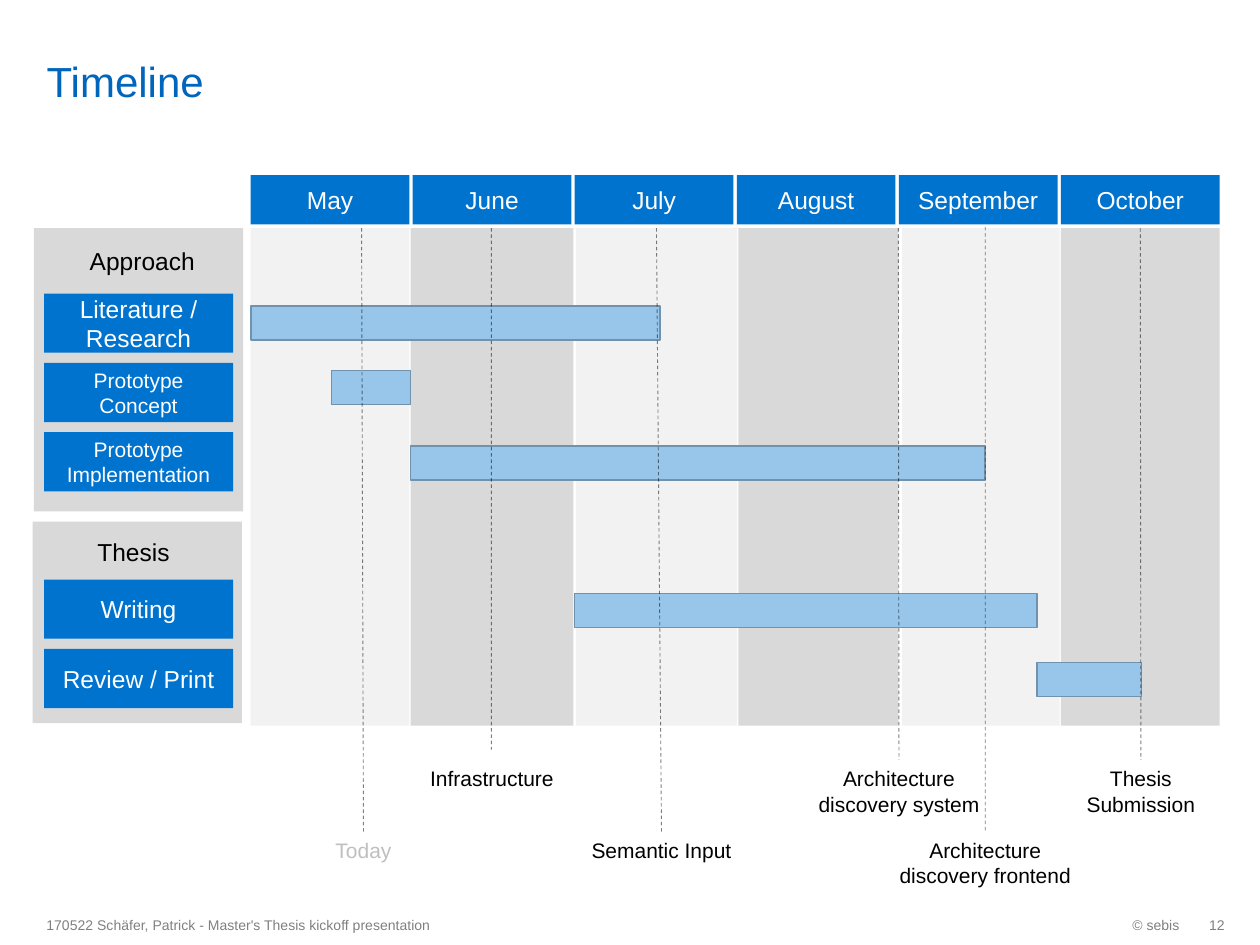
from lxml import etree
from pptx import Presentation
from pptx.dml.color import RGBColor
from pptx.enum.dml import MSO_LINE
from pptx.enum.shapes import MSO_CONNECTOR, MSO_SHAPE
from pptx.enum.text import MSO_ANCHOR as ANCHOR, MSO_AUTO_SIZE as AUTO_SIZE, PP_ALIGN as ALIGN
from pptx.oxml.ns import qn
from pptx.util import Inches, Pt

BLUE, GREY, LIGHT_GREY = "0073CF", "D9D9D9", "F2F2F2"
BLACK, WHITE, FOOTER_GREY = "000000", "FFFFFF", "808080"

# Month, then left and width of its column
MONTHS = [("May", 1.99, 1.26), ("June", 3.26, 1.29), ("July", 4.57, 1.28),
          ("August", 5.86, 1.27), ("September", 7.16, 1.25), ("October", 8.42, 1.26)]

# Heading with its box, panel box, tasks with text size
GROUPS = [
    ("Approach", (0.61, 1.9, 1.04, 0.34), (0.27, 1.81, 1.66, 2.25), 2.33,
     [("Literature / Research", 14), ("Prototype Concept", 12),
      ("Prototype Implementation", 12)]),
    ("Thesis", (0.67, 4.21, 0.78, 0.34), (0.26, 4.14, 1.66, 1.6), 4.6,
     [("Writing", 14), ("Review / Print", 14)]),
]

# Left, top and width of each task's time span
SPANS = [(1.99, 2.43, 3.25), (2.63, 2.94, 0.63), (3.26, 3.54, 4.56),
         (4.56, 4.71, 3.67), (8.23, 5.26, 0.83)]

# Label lines, label box, line start, line end (None: the label's top)
MILESTONES = [
    (["Thesis", "Submission"], (8.52, 6.03, 1.07, 0.5), (9.05, 1.81), None, BLACK),
    (["Infrastructure"], (3.31, 6.03, 1.19, 0.3), (3.9, 1.81), (3.9, 5.95), BLACK),
    (["Today"], (2.56, 6.6, 0.65, 0.3), (2.87, 1.81), None, "BFBFBF"),
    (["Semantic Input"], (4.59, 6.6, 1.32, 0.3), (5.21, 1.81), None, BLACK),
    (["Architecture", "discovery system"], (6.39, 6.03, 1.49, 0.5), (7.13, 1.81), None, BLACK),
    (["Architecture", "discovery frontend"], (7.01, 6.6, 1.62, 0.5), (7.82, 1.8), None, BLACK),
]


def color(hex_string):
    return RGBColor.from_string(hex_string)


def write(frame, lines, size, ink, align):
    paragraph = frame.paragraphs[0]
    paragraph.alignment = align
    for index, line in enumerate(lines):
        if index:
            paragraph.add_line_break()
        run = paragraph.add_run()
        run.text = line
        run.font.name = "Arial"
        run.font.size = Pt(size)
        run.font.color.rgb = color(ink)


def add_box(slide, box, fill, text=None, size=14, outline=None):
    rect = slide.shapes.add_shape(MSO_SHAPE.RECTANGLE, *map(Inches, box))
    rect.shadow.inherit = False
    rect.fill.solid()
    rect.fill.fore_color.rgb = color(fill)
    if outline:
        rect.line.color.rgb = color(outline)
        rect.line.width = Pt(0.85)
    else:
        rect.line.fill.background()
    if text:
        rect.text_frame.vertical_anchor = ANCHOR.MIDDLE
        write(rect.text_frame, [text], size, WHITE, ALIGN.CENTER)


def add_label(slide, box, lines, size, ink=BLACK, align=ALIGN.CENTER,
              anchor=ANCHOR.TOP, wrap=False, grow=True):
    label = slide.shapes.add_textbox(*map(Inches, box))
    frame = label.text_frame
    frame.word_wrap = wrap
    frame.auto_size = AUTO_SIZE.SHAPE_TO_FIT_TEXT if grow else AUTO_SIZE.NONE
    frame.vertical_anchor = anchor
    write(frame, lines, size, ink, align)
    return label


def add_title(slide, box, text):
    title = slide.shapes.title
    title.left, title.top, title.width, title.height = map(Inches, box)
    frame = title.text_frame
    frame.vertical_anchor = ANCHOR.BOTTOM
    frame.margin_top = frame.margin_bottom = 0
    write(frame, [text], 24, "0065BD", ALIGN.LEFT)


def add_footer(slide, top):
    style = dict(size=8, ink=FOOTER_GREY, anchor=ANCHOR.MIDDLE, grow=False)
    add_label(slide, (7.7, top, 1.76, 0.32), ["© sebis"], align=ALIGN.RIGHT, **style)
    number = add_label(slide, (9.45, top, 0.27, 0.32), ["12"], align=ALIGN.RIGHT, **style)
    number.text_frame.margin_right = 0
    add_label(slide, (0.27, top, 4.73, 0.32),
              ["170522 Schäfer, Patrick - Master's Thesis kickoff presentation"],
              align=ALIGN.LEFT, wrap=True, **style)


def add_calendar(slide, box):
    left, top, width, height = box
    header_width, header_height, body_offset = 1.26, 0.39, 0.42
    pitch = (width - header_width) / (len(MONTHS) - 1)
    for index, (month, column_left, column_width) in enumerate(MONTHS):
        add_box(slide, (left + index * pitch, top, header_width, header_height), BLUE, month)
        add_box(slide, (column_left, top + body_offset, column_width, height - body_offset),
                GREY if index % 2 else LIGHT_GREY)


def add_group(slide, heading, heading_box, panel_box, first_top, tasks):
    add_box(slide, panel_box, GREY)
    add_label(slide, heading_box, [heading], 14)
    for index, (task, size) in enumerate(tasks):
        add_box(slide, (0.35, first_top + index * 0.55, 1.5, 0.47), BLUE, task, size)


def add_milestone(slide, lines, label_box, start, end, ink):
    label = add_label(slide, label_box, lines, 12, ink)
    marker = slide.shapes.add_connector(
        MSO_CONNECTOR.STRAIGHT, *map(Inches, start + (end or start)))
    if end is None:
        marker.end_connect(label, 0)
    marker.line.width = Pt(0.5)
    marker.line.color.rgb = color(BLACK)
    marker.line.dash_style = MSO_LINE.DASH
    # Half-transparent line without shadow
    properties = marker.line._get_or_add_ln().getparent()
    etree.SubElement(next(properties.iter(qn("a:srgbClr"))), qn("a:alpha"), val="50000")
    etree.SubElement(properties, qn("a:effectLst"))


def main():
    prs = Presentation()
    prs.slide_width, prs.slide_height = Inches(10), Inches(7.5)
    slide = prs.slides.add_slide(prs.slide_layouts[5])
    add_title(slide, (0.27, 0.05, 8.24, 0.79), "Timeline")
    add_footer(slide, 7.18)
    add_calendar(slide, (1.99, 1.39, 7.69, 4.37))
    for group in GROUPS:
        add_group(slide, *group)
    for left, top, width in SPANS:
        add_box(slide, (left, top, width, 0.27), "98C6EA", outline="7092AD")
    for milestone in MILESTONES:
        add_milestone(slide, *milestone)
    prs.save("out.pptx")


if __name__ == "__main__":
    main()
